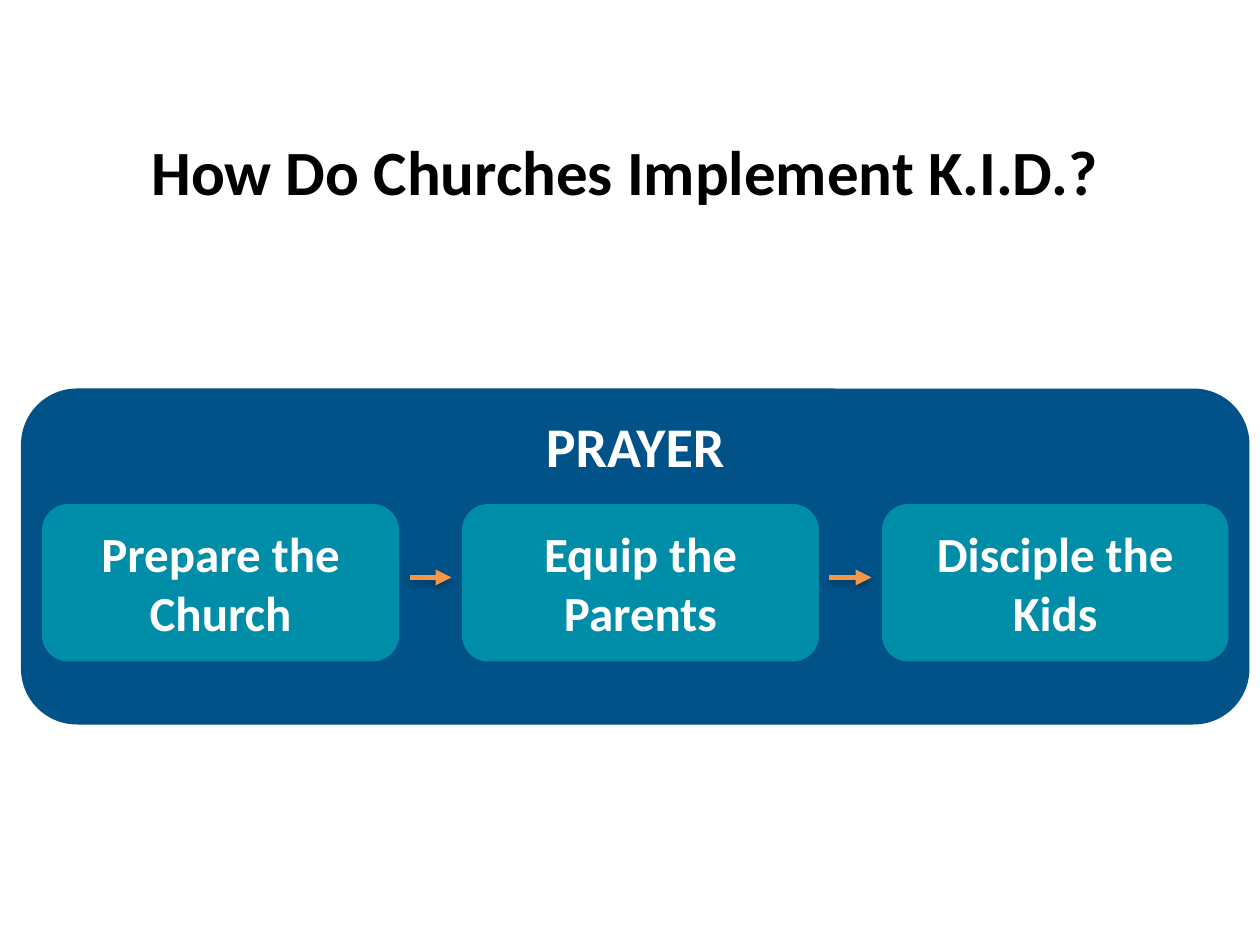
import pptx
import pptx.dml.color
import pptx.enum.shapes
import pptx.enum.text
import pptx.oxml
import pptx.oxml.ns
import pptx.util
from dataclasses import dataclass


@dataclass(frozen=True)
class Theme:
    font: str = "Calibri"
    ink: str = "000000"
    paper: str = "FFFFFF"
    panel: str = "005288"
    step: str = "008DA8"
    arrow: str = "F79646"
    title_size: int = 36
    panel_size: int = 32
    step_size: int = 28
    arrow_width: int = 3


SHADOW = (
    f'<a:effectLst {pptx.oxml.ns.nsdecls("a")}>'
    '<a:outerShdw blurRad="63500" dist="22860" dir="5400000" rotWithShape="0">'
    '<a:srgbClr val="000000"><a:alpha val="35000"/></a:srgbClr>'
    '</a:outerShdw></a:effectLst>'
)


class SlideBuilder:
    """Draws on one slide, on a grid of 120 columns by 90 rows."""

    COLS, ROWS = 120, 90

    def __init__(self, prs, theme):
        self.theme = theme
        self.cell_w = prs.slide_width / self.COLS
        self.cell_h = prs.slide_height / self.ROWS
        self.slide = prs.slides.add_slide(prs.slide_layouts[5])

    def x(self, col):
        return pptx.util.Emu(round(col * self.cell_w))

    def y(self, row):
        return pptx.util.Emu(round(row * self.cell_h))

    def set_text(self, tf, text, size, color, anchor):
        tf.text = text
        tf.vertical_anchor = anchor
        p = tf.paragraphs[0]
        p.alignment = pptx.enum.text.PP_ALIGN.CENTER
        font = p.runs[0].font
        font.name, font.size, font.bold = self.theme.font, pptx.util.Pt(size), True
        font.color.rgb = pptx.dml.color.RGBColor.from_string(color)

    def title(self, text, col, row, cols, rows):
        sp = self.slide.shapes.title
        sp.left, sp.top = self.x(col), self.y(row)
        sp.width, sp.height = self.x(cols), self.y(rows)
        tf = sp.text_frame
        self.set_text(tf, text, self.theme.title_size, self.theme.ink,
                      pptx.enum.text.MSO_ANCHOR.TOP)
        tf.word_wrap = False
        tf.auto_size = pptx.enum.text.MSO_AUTO_SIZE.SHAPE_TO_FIT_TEXT

    def box(self, text, col, row, cols, rows, fill, size, anchor):
        sp = self.slide.shapes.add_shape(
            pptx.enum.shapes.MSO_SHAPE.FLOWCHART_ALTERNATE_PROCESS,
            self.x(col), self.y(row), self.x(cols), self.y(rows))
        sp.shadow.inherit = False
        sp.fill.solid()
        sp.fill.fore_color.rgb = pptx.dml.color.RGBColor.from_string(fill)
        sp.line.fill.background()
        tf = sp.text_frame
        tf.word_wrap = True
        tf.margin_left = tf.margin_right = 0
        self.set_text(tf, text, size, self.theme.paper, anchor)

    def arrow(self, start, end, row):
        line = self.slide.shapes.add_connector(
            pptx.enum.shapes.MSO_CONNECTOR.STRAIGHT,
            self.x(start), self.y(row), self.x(end), self.y(row))
        line.line.width = pptx.util.Pt(self.theme.arrow_width)
        line.line.color.rgb = pptx.dml.color.RGBColor.from_string(self.theme.arrow)
        line.line._get_or_add_ln().append(pptx.oxml.parse_xml(
            f'<a:tailEnd {pptx.oxml.ns.nsdecls("a")} type="triangle"/>'))
        line._element.spPr.append(pptx.oxml.parse_xml(SHADOW))


def main():
    prs = pptx.Presentation()
    prs.slide_width = pptx.util.Inches(10)
    prs.slide_height = pptx.util.Inches(7.5)
    theme = Theme()
    s = SlideBuilder(prs, theme)
    anchors = pptx.enum.text.MSO_ANCHOR

    s.title("How Do Churches Implement K.I.D.?", 6, 12, 107, 8.5)

    # Prayer panel behind the steps
    s.box("PRAYER", 2, 37, 117, 32, theme.panel, theme.panel_size, anchors.TOP)

    # Three steps, evenly spaced, with an arrow in each gap
    steps = [("Prepare the Church", 34), ("Equip the Parents", 34),
             ("Disciple the Kids", 33)]
    pitch, first = 40, 4
    for i, (text, cols) in enumerate(steps):
        col = first + i * pitch
        s.box(text, col, 48, cols, 15, theme.step, theme.step_size, anchors.MIDDLE)
        if i:
            s.arrow(col - 5, col - 1, 55)

    prs.save("out.pptx")


if __name__ == "__main__":
    main()
